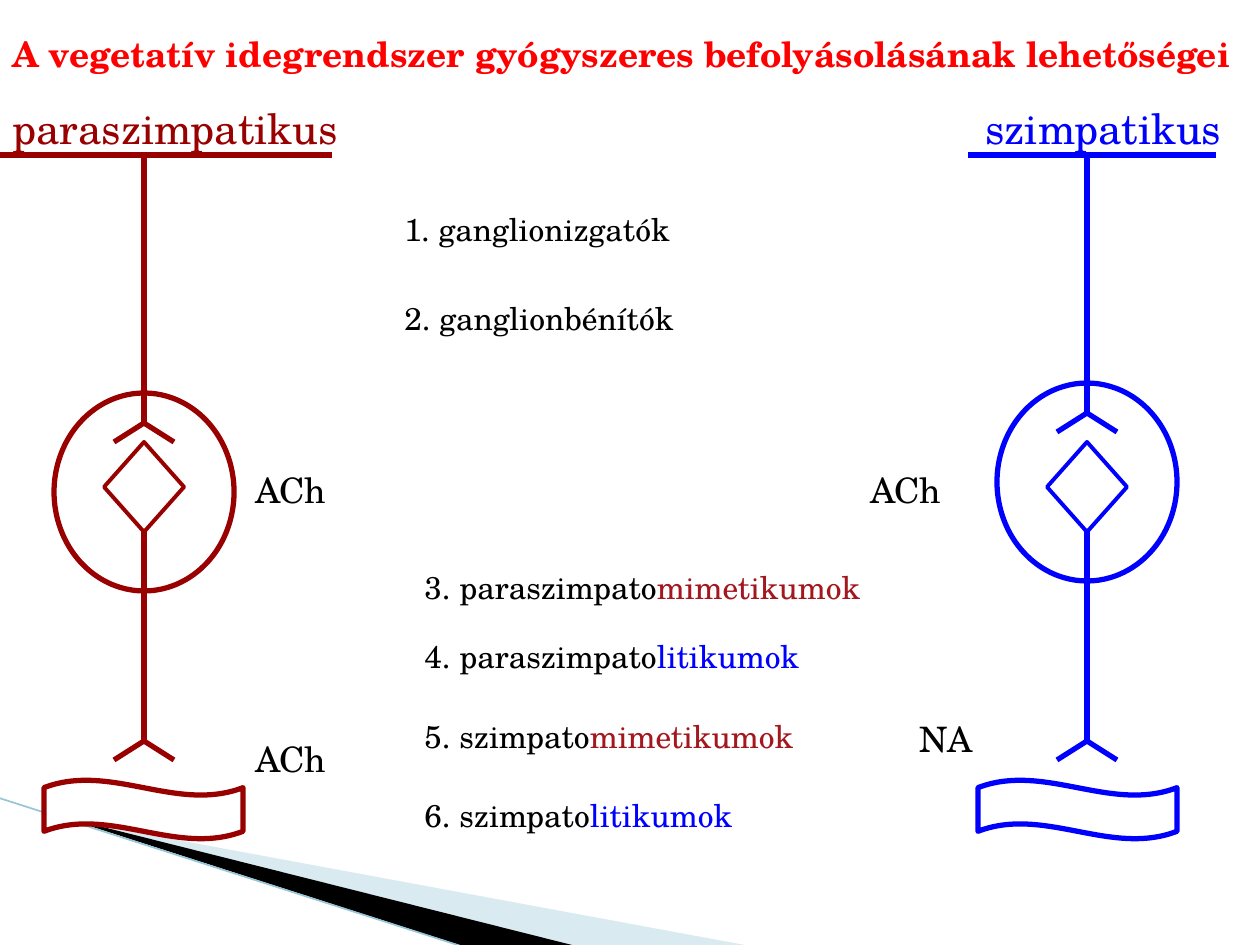
from lxml.etree import SubElement
from pptx import Presentation
from pptx.dml.color import RGBColor
from pptx.enum.shapes import MSO_CONNECTOR, MSO_SHAPE
from pptx.enum.text import MSO_AUTO_SIZE
from pptx.oxml.ns import qn
from pptx.util import Pt

PX = 914400 / 126
FONT = "TeX Gyre Schola"
COLORS = {
    "parasympathetic": "990000",
    "sympathetic": "0000FF",
    "mimetic": "A3171E",
    "lytic": "0000FF",
    "title": "FF0000",
    "black": "000000",
    "white": "FFFFFF",
    "pale": "A0CBDC",
    "edge": "97C5D8",
}

deck = Presentation()
deck.slide_width = round(1260 * PX)
deck.slide_height = round(945 * PX)
page = deck.slides.add_slide(deck.slide_layouts[6])


def add_text(spans, left, top, width, height, size=18, bold=False, fill=None):
    box = page.shapes.add_textbox(*[round(v * PX) for v in (left, top, width, height)])
    if fill:
        box.fill.solid()
        box.fill.fore_color.rgb = RGBColor.from_string(COLORS[fill])
    frame = box.text_frame
    frame.word_wrap = True
    frame.auto_size = MSO_AUTO_SIZE.SHAPE_TO_FIT_TEXT
    para = frame.paragraphs[0]
    for text, color in spans:
        span = para.add_run()
        span.text = text
        span.font.name = FONT
        span.font.size = Pt(size)
        span.font.bold = bold
        span.font.color.rgb = RGBColor.from_string(COLORS[color])


def add_line(x1, y1, x2, y2, color, width=3):
    line = page.shapes.add_connector(
        MSO_CONNECTOR.STRAIGHT, *[round(v * PX) for v in (x1, y1, x2, y2)])
    line.line.width = Pt(width)
    line.line.color.rgb = RGBColor.from_string(COLORS[color])
    SubElement(line._element.spPr, qn("a:effectLst"))
    return line


for color, opacity, points in [
    ("pale", 40, [(69, 820), (750, 946), (575, 946), (69, 819)]),
    ("black", 100, [(67, 818), (576, 946), (469, 948), (68, 819)]),
]:
    builder = page.shapes.build_freeform(*points[0], scale=PX)
    builder.add_line_segments(points[1:], close=True)
    wedge = builder.convert_to_shape()
    wedge.shadow.inherit = False
    wedge.line.fill.background()
    wedge.fill.solid()
    wedge.fill.fore_color.rgb = RGBColor.from_string(COLORS[color])
    if opacity < 100:
        tint = wedge._element.spPr.find(qn("a:solidFill"))[0]
        SubElement(tint, qn("a:alpha"), val=str(opacity * 1000))
add_line(-1, 798, 467, 948, "edge", 0.95)

add_text([("paraszimpatikus", "parasympathetic")], 0, 96, 353, 63, size=24)
add_text([("szimpatikus", "sympathetic")], 973, 96, 287, 63, size=24, fill="white")

for color, center, bar_start, bar_end, ganglion_top, wave_left, wave_fill in [
    ("parasympathetic", 144, 0, 332, 393, 44, "white"),
    ("sympathetic", 1087, 968, 1216, 383, 978, None),
]:
    synapse = ganglion_top + 30
    add_line(bar_start, 155, bar_end, 155, color)
    add_line(center, 155, center, synapse, color)
    for fork in (synapse, 741):
        for side in (-30, 30):
            add_line(center, fork, center + side, fork + 19, color)
    for kind, left, top, width, height, weight, fill in [
        (MSO_SHAPE.WAVE, wave_left, 780, 199, 59, 3, wave_fill),
        (MSO_SHAPE.OVAL, center - 90, ganglion_top, 180, 198, 3, None),
        (MSO_SHAPE.DIAMOND, center - 40, 442, 80, 90, 2.25, None),
    ]:
        shape = page.shapes.add_shape(
            kind, *[round(v * PX) for v in (left, top, width, height)])
        shape.shadow.inherit = False
        shape.line.width = Pt(weight)
        shape.line.color.rgb = RGBColor.from_string(COLORS[color])
        if fill:
            shape.fill.solid()
            shape.fill.fore_color.rgb = RGBColor.from_string(COLORS[fill])
        else:
            shape.fill.background()
        if kind == MSO_SHAPE.WAVE:
            shape.adjustments[0] = 0.13
    axon = add_line(center, 532, center, 741, color)
    axon.begin_connect(shape, 2)

for transmitter, left, top, width, fill in [
    ("ACh", 243, 462, 238, None),
    ("ACh", 858, 462, 129, "white"),
    ("ACh", 243, 731, 208, None),
    ("NA", 907, 711, 159, None),
]:
    add_text([(transmitter, "black")], left, top, width, 54, size=20, fill=fill)

add_text([("A vegetatív idegrendszer gyógyszeres befolyásolásának lehetőségei", "title")],
         0, 26, 1260, 55, size=20, bold=True)

for left, top, width, spans in [
    (392, 204, 447, [("1. ganglionizgatók", "black")]),
    (392, 293, 367, [("2. ganglionbénítók", "black")]),
    (412, 562, 486, [("3. paraszimpato", "black"), ("mimetikumok", "mimetic")]),
    (412, 631, 496, [("4. paraszimpato", "black"), ("litikumok", "lytic")]),
    (412, 711, 417, [("5. szimpato", "black"), ("mimetikumok", "mimetic")]),
    (412, 790, 437, [("6. szimpato", "black"), ("litikumok", "lytic")]),
]:
    add_text(spans, left, top, width, 50)

deck.save("out.pptx")
